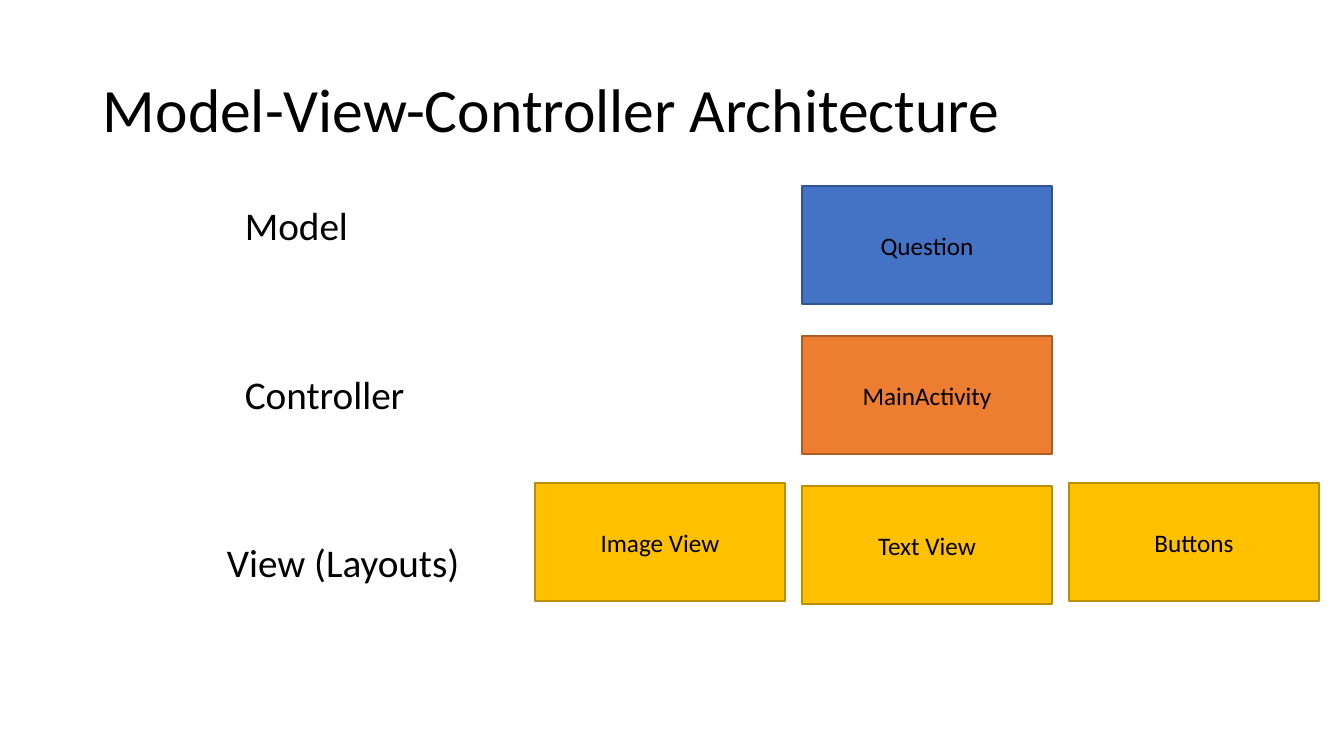
from dataclasses import dataclass

from lxml import etree
from pptx import Presentation
from pptx import util as u
from pptx.dml.color import RGBColor
from pptx.enum import shapes, text
from pptx.slide import Slide
from pptx.text.text import TextFrame, _Paragraph

EMU_PER_PX = 914400 / 100.8


@dataclass(frozen=True)
class Theme:
    font: str = "Calibri"
    ink: str = "000000"
    title_size: int = 44
    layer_size: int = 28
    box_size: int = 18
    model: tuple[str, str] = ("4472C4", "325491")
    controller: tuple[str, str] = ("ED7D31", "AF5C24")
    view: tuple[str, str] = ("FFC000", "BD8E00")


@dataclass(frozen=True)
class Layer:
    name: str
    indent: int


@dataclass(frozen=True)
class Component:
    name: str
    column: int
    top: int
    colours: tuple[str, str]


THEME = Theme()
LAYERS = [Layer("Model", 142), Layer("Controller", 142), Layer("View (Layouts)", 124)]
LAYER_GAP = 90  # points

BOX_WIDTH, BOX_HEIGHT = 250, 118
FIRST_COLUMN, COLUMN_PITCH = 535, 267
FIRST_ROW, ROW_PITCH = 186, 150
MODEL_TOP, CONTROLLER_TOP, VIEW_TOP = (FIRST_ROW + row * ROW_PITCH for row in range(3))
SIDE_VIEW_TOP = VIEW_TOP - 3
COMPONENTS = [
    Component("Question", 1, MODEL_TOP, THEME.model),
    Component("MainActivity", 1, CONTROLLER_TOP, THEME.controller),
    Component("Text View", 1, VIEW_TOP, THEME.view),
    Component("Buttons", 2, SIDE_VIEW_TOP, THEME.view),
    Component("Image View", 0, SIDE_VIEW_TOP, THEME.view),
]


def px(length: int) -> u.Emu:
    return u.Emu(round(length * EMU_PER_PX))


def colour(code: str) -> RGBColor:
    return RGBColor.from_string(code)


def write(para: _Paragraph, words: str, size: int) -> None:
    para.text = words
    para.font.name = THEME.font
    para.font.size = u.Pt(size)
    para.font.color.rgb = colour(THEME.ink)


def add_text_frame(page: Slide, left: int, top: int, width: int, height: int) -> TextFrame:
    frame = page.shapes.add_textbox(px(left), px(top), px(width), px(height)).text_frame
    frame.word_wrap = True
    return frame


def add_title(page: Slide, words: str) -> None:
    frame = add_text_frame(page, 93, 40, 1159, 146)
    frame.vertical_anchor = text.MSO_ANCHOR.MIDDLE
    para = frame.paragraphs[0]
    write(para, words, THEME.title_size)
    para.line_spacing = 0.9


def add_layers(page: Slide, layers: list[Layer]) -> None:
    frame = add_text_frame(page, 93, 202, 1159, 480)
    for number, layer in enumerate(layers):
        para = frame.add_paragraph() if number else frame.paragraphs[0]
        write(para, layer.name, THEME.layer_size)
        para.line_spacing = 0.9
        para.space_before = u.Pt(LAYER_GAP if number else 0)
        properties: etree._Element = para._p.get_or_add_pPr()
        properties.set("marL", str(px(layer.indent)))


def add_component(page: Slide, component: Component) -> None:
    left = FIRST_COLUMN + component.column * COLUMN_PITCH
    box = page.shapes.add_shape(
        shapes.MSO_SHAPE.RECTANGLE,
        px(left), px(component.top), px(BOX_WIDTH), px(BOX_HEIGHT),
    )
    fill, line = component.colours
    box.shadow.inherit = False
    box.fill.solid()
    box.fill.fore_color.rgb = colour(fill)
    box.line.color.rgb = colour(line)
    box.line.width = u.Pt(1)
    box.text_frame.vertical_anchor = text.MSO_ANCHOR.MIDDLE
    para = box.text_frame.paragraphs[0]
    write(para, component.name, THEME.box_size)
    para.alignment = text.PP_ALIGN.CENTER


def main() -> None:
    deck = Presentation()
    deck.slide_width, deck.slide_height = px(1344), px(756)
    page = deck.slides.add_slide(deck.slide_layouts[6])
    add_title(page, "Model-View-Controller Architecture")
    add_layers(page, LAYERS)
    for component in COMPONENTS:
        add_component(page, component)
    deck.save("out.pptx")


if __name__ == "__main__":
    main()
